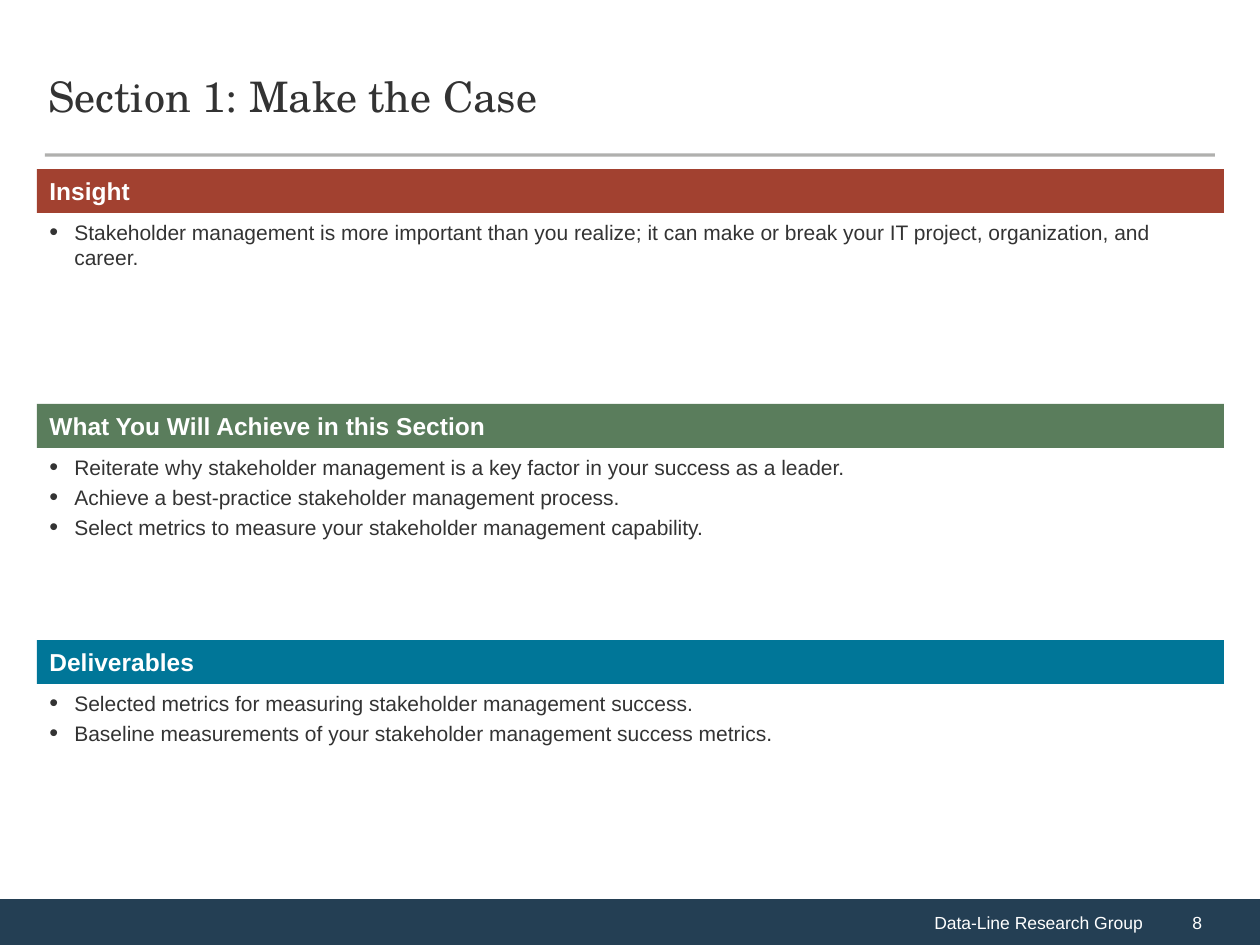
from lxml import etree
from pptx import Presentation
from pptx.dml.color import RGBColor
from pptx.enum.shapes import MSO_CONNECTOR, MSO_SHAPE
from pptx.enum.text import MSO_ANCHOR, PP_ALIGN
from pptx.oxml.ns import qn
from pptx.util import Pt

RECT = MSO_SHAPE.RECTANGLE
LINE = MSO_CONNECTOR.STRAIGHT
TOP, MID = MSO_ANCHOR.TOP, MSO_ANCHOR.MIDDLE
LEFT, RIGHT = PP_ALIGN.LEFT, PP_ALIGN.RIGHT
SANS, SERIF = "Arial", "TeX Gyre Schola"
INK, WHITE, NAVY, GREY = "333333", "FFFFFF", "243F54", "45433E"

PARTS = [
    ("Insight", "A24130", [
        "Stakeholder management is more important than you realize; it can "
        "make or break your IT project, organization, and career.",
    ]),
    ("What You Will Achieve in this Section", "5A7D5C", [
        "Reiterate why stakeholder management is a key factor in your success as a leader.",
        "Achieve a best-practice stakeholder management process.",
        "Select metrics to measure your stakeholder management capability.",
    ]),
    ("Deliverables", "007698", [
        "Selected metrics for measuring stakeholder management success.",
        "Baseline measurements of your stakeholder management success metrics.",
    ]),
]


def px(n):
    return round(n * 914400 / 126)


def hue(code):
    return RGBColor.from_string(code)


def node(root, tag, **attrs):
    return etree.SubElement(root, qn(tag), attrs)


def write(para, text, size, color, font=SANS, bold=False):
    run = para.add_run()
    run.text = text
    run.font.size = Pt(size)
    run.font.name = font
    run.font.bold = bold
    run.font.color.rgb = hue(color)


def bar(slide, box, fill, text, size, bold=False, align=LEFT, pad=0):
    shape = slide.shapes.add_shape(RECT, *map(px, box))
    shape.shadow.inherit = False
    shape.fill.solid()
    shape.fill.fore_color.rgb = hue(fill)
    shape.line.fill.background()
    frame = shape.text_frame
    frame.word_wrap = True
    frame.vertical_anchor = MID
    para = frame.paragraphs[0]
    para.alignment = align
    para._p.get_or_add_pPr().set("marL", str(px(pad)))
    write(para, text, size, WHITE, bold=bold)


def area(slide, box, anchor):
    frame = slide.shapes.add_textbox(*map(px, box)).text_frame
    frame.word_wrap = True
    frame.vertical_anchor = anchor
    return frame


def bullet(para):
    para.space_before = Pt(2.8)
    props = para._p.get_or_add_pPr()
    props.set("marL", str(px(25)))
    props.set("indent", str(px(-25)))
    node(node(props, "a:buClr"), "a:srgbClr", val=INK)
    node(props, "a:buSzPct", val="120000")
    node(props, "a:buFont", typeface=SANS)
    node(props, "a:buChar", char="•")


def header(slide, x, y, w, h):
    frame = area(slide, (x, y, w, h), MID)
    write(frame.paragraphs[0], "Section 1: Make the Case", 24, INK, SERIF)
    base = px(y + h - 1)
    rule = slide.shapes.add_connector(LINE, px(x + 9), base, px(x + w - 8), base)
    rule.line.width = Pt(1.75)
    rule.line.color.rgb = hue(GREY)
    props = rule._element.spPr
    node(props.find(".//" + qn("a:srgbClr")), "a:alpha", val="42000")
    node(props, "a:effectLst")


def section(slide, x, y, w, h, part):
    title, fill, items = part
    head = 44
    bar(slide, (x, y, w, head), fill, title, 14, bold=True)
    frame = area(slide, (x, y + head, w - 3, h - head), TOP)
    for i, item in enumerate(items):
        para = frame.add_paragraph() if i else frame.paragraphs[0]
        bullet(para)
        write(para, item, 12, INK)


def footer(slide, x, y, w, h):
    split = w - 105
    bar(slide, (x, y, split, h), NAVY, "Data-Line Research Group", 10, align=RIGHT, pad=36)
    bar(slide, (x + split, y, w - split, h), NAVY, "8", 10, pad=25)


def main():
    deck = Presentation()
    deck.slide_width, deck.slide_height = px(1260), px(945)
    slide = deck.slides.add_slide(deck.slide_layouts[6])
    footer(slide, 0, 899, 1260, 46)
    header(slide, 36, 35, 1187, 121)
    for i, part in enumerate(PARTS):
        section(slide, 37, 169 + i * 471 // 2, 1187, 234, part)
    deck.save("out.pptx")


if __name__ == "__main__":
    main()
